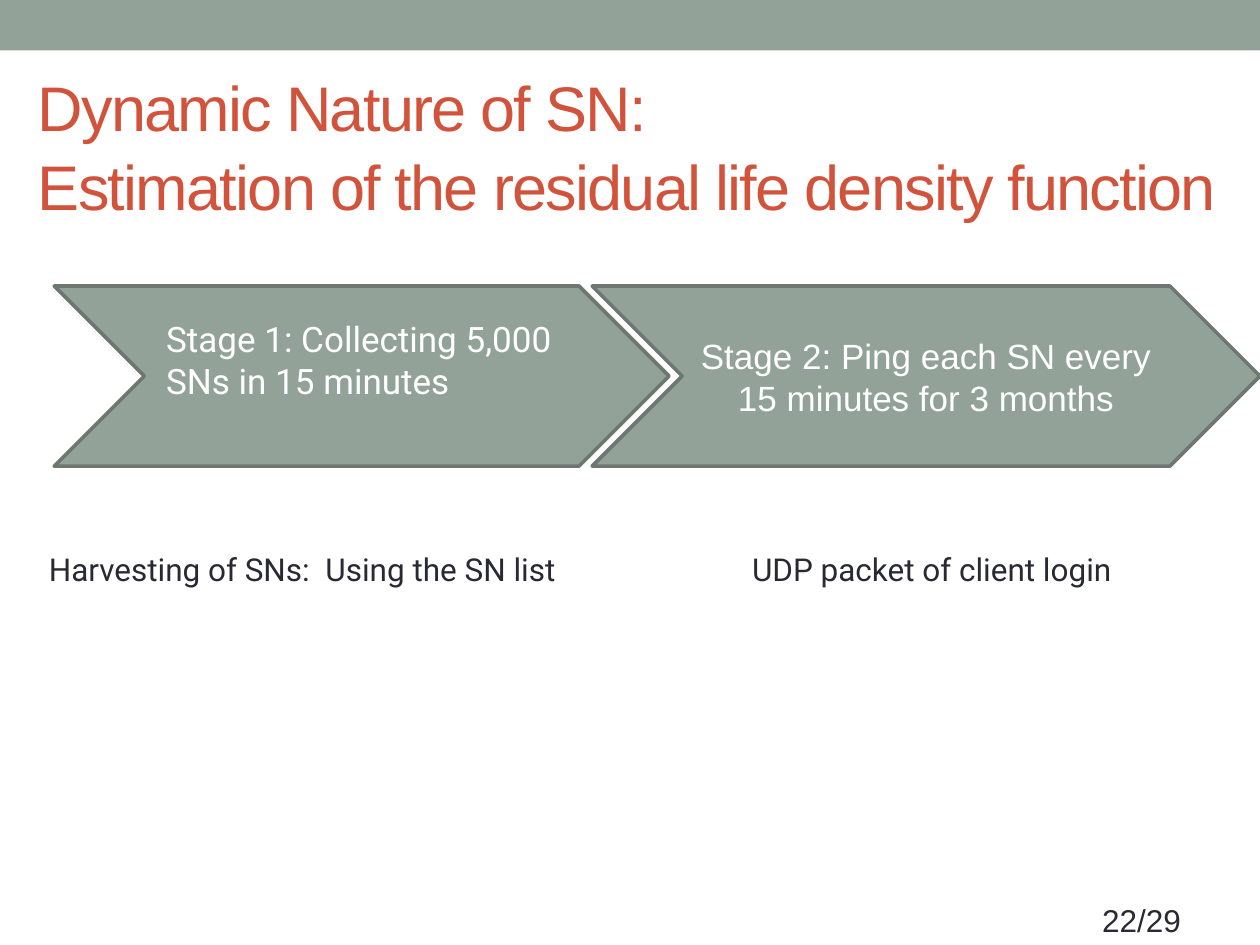
"""Build the slide on the two stages of estimating the residual life density."""
from dataclasses import dataclass

from pptx import Presentation
from pptx.dml.color import RGBColor
from pptx.enum.shapes import MSO_SHAPE
from pptx.enum.text import MSO_ANCHOR, MSO_AUTO_SIZE, PP_ALIGN
from pptx.util import Inches, Pt

RECTANGLE, CHEVRON = MSO_SHAPE.RECTANGLE, MSO_SHAPE.CHEVRON
LEFT, CENTER, RIGHT = PP_ALIGN.LEFT, PP_ALIGN.CENTER, PP_ALIGN.RIGHT
MIDDLE, NO_FIT = MSO_ANCHOR.MIDDLE, MSO_AUTO_SIZE.NONE
TITLE_ONLY = 5
WIDTH, HEIGHT = Inches(10), Inches(7.5)
COLUMN, ROW = WIDTH / 100, HEIGHT / 75


@dataclass(frozen=True)
class Theme:
    """Colours, fonts and sizes of the slide."""
    sage: RGBColor = RGBColor(0x93, 0xA2, 0x99)
    outline: RGBColor = RGBColor(0x6D, 0x78, 0x71)
    red: RGBColor = RGBColor(0xD2, 0x53, 0x3C)
    ink: RGBColor = RGBColor(0x29, 0x29, 0x34)
    white: RGBColor = RGBColor(0xFF, 0xFF, 0xFF)
    heading_font: str = "Arial"
    text_font: str = "Roboto"
    title_size: int = 36
    stage_size: int = 20
    caption_size: int = 18
    outline_width: float = 2.08


@dataclass(frozen=True)
class Area:
    """A rectangle in columns and rows of the page grid."""
    column: float
    row: float
    columns: float
    rows: float

    def lengths(self) -> tuple[int, int, int, int]:
        """Return left, top, width and height in slide units."""
        return (round(self.column * COLUMN), round(self.row * ROW),
                round(self.columns * COLUMN), round(self.rows * ROW))


@dataclass(frozen=True)
class Label:
    """A text with its place and look."""
    text: str
    area: Area
    size: int
    color: RGBColor
    font: str
    align: PP_ALIGN = LEFT


THEME = Theme()
BAND = Area(0, 0, 100, 4)
TITLE = Label("Dynamic Nature of SN:\vEstimation of the residual life density function",
              Area(2, 6, 95.9, 10.8), THEME.title_size, THEME.red, THEME.heading_font)
FIRST_STAGE = Area(4.3, 22.7, 48.8, 14.3)
SECOND_STAGE = Label("Stage 2: Ping each SN every 15 minutes for 3 months",
                     Area(47, 22.7, 53, 14.3), THEME.stage_size, THEME.white,
                     THEME.heading_font, CENTER)
FIRST_STAGE_LABEL = Label("Stage 1: Collecting 5,000 SNs in 15 minutes",
                          Area(12.2, 24.7, 34.8, 7.7), THEME.stage_size, THEME.white,
                          THEME.text_font)
LABELS = (
    Label("Harvesting of SNs:  Using the SN list", Area(2.9, 43.2, 50, 4),
          THEME.caption_size, THEME.ink, THEME.text_font),
    Label("UDP packet of client login", Area(58.7, 43.2, 33.1, 4),
          THEME.caption_size, THEME.ink, THEME.text_font),
    Label("22/29", Area(84.6, 71, 10.1, 4),
          THEME.caption_size, THEME.ink, THEME.heading_font, RIGHT),
)


def write(shape, label: Label) -> None:
    """Put the label's text into a shape and format it."""
    frame = shape.text_frame
    frame.word_wrap = True
    frame.text = label.text
    paragraph = frame.paragraphs[0]
    paragraph.alignment = label.align
    paragraph.font.name = label.font
    paragraph.font.size = Pt(label.size)
    paragraph.font.color.rgb = label.color


def add_block(shapes, kind: MSO_SHAPE, area: Area, outlined: bool = True):
    """Draw a sage shape, with or without an outline."""
    block = shapes.add_shape(kind, *area.lengths())
    block.shadow.inherit = False
    block.fill.solid()
    block.fill.fore_color.rgb = THEME.sage
    if outlined:
        block.line.color.rgb = THEME.outline
        block.line.width = Pt(THEME.outline_width)
    else:
        block.line.fill.background()
    return block


def add_label(shapes, label: Label) -> None:
    """Draw a label as a text box."""
    write(shapes.add_textbox(*label.area.lengths()), label)


def set_title(title, label: Label) -> None:
    """Move the title placeholder into place and fill it."""
    title.left, title.top, title.width, title.height = label.area.lengths()
    write(title, label)
    frame = title.text_frame
    frame.auto_size = NO_FIT
    frame.vertical_anchor = MIDDLE
    frame.margin_right = 0
    paragraph = frame.paragraphs[0]
    paragraph.line_spacing = 1.05
    for span in paragraph.runs:
        span.font._element.set("spc", "-100")


def main() -> None:
    """Build and save the deck."""
    deck = Presentation()
    deck.slide_width, deck.slide_height = WIDTH, HEIGHT
    page = deck.slides.add_slide(deck.slide_layouts[TITLE_ONLY])
    add_block(page.shapes, RECTANGLE, BAND, outlined=False)
    set_title(page.shapes.title, TITLE)
    first_stage = page.shapes.add_group_shape()
    add_block(first_stage.shapes, CHEVRON, FIRST_STAGE)
    add_label(first_stage.shapes, FIRST_STAGE_LABEL)
    second_stage = add_block(page.shapes, CHEVRON, SECOND_STAGE.area)
    write(second_stage, SECOND_STAGE)
    second_stage.text_frame.vertical_anchor = MIDDLE
    for label in LABELS:
        add_label(page.shapes, label)
    deck.save("out.pptx")


if __name__ == "__main__":
    main()
